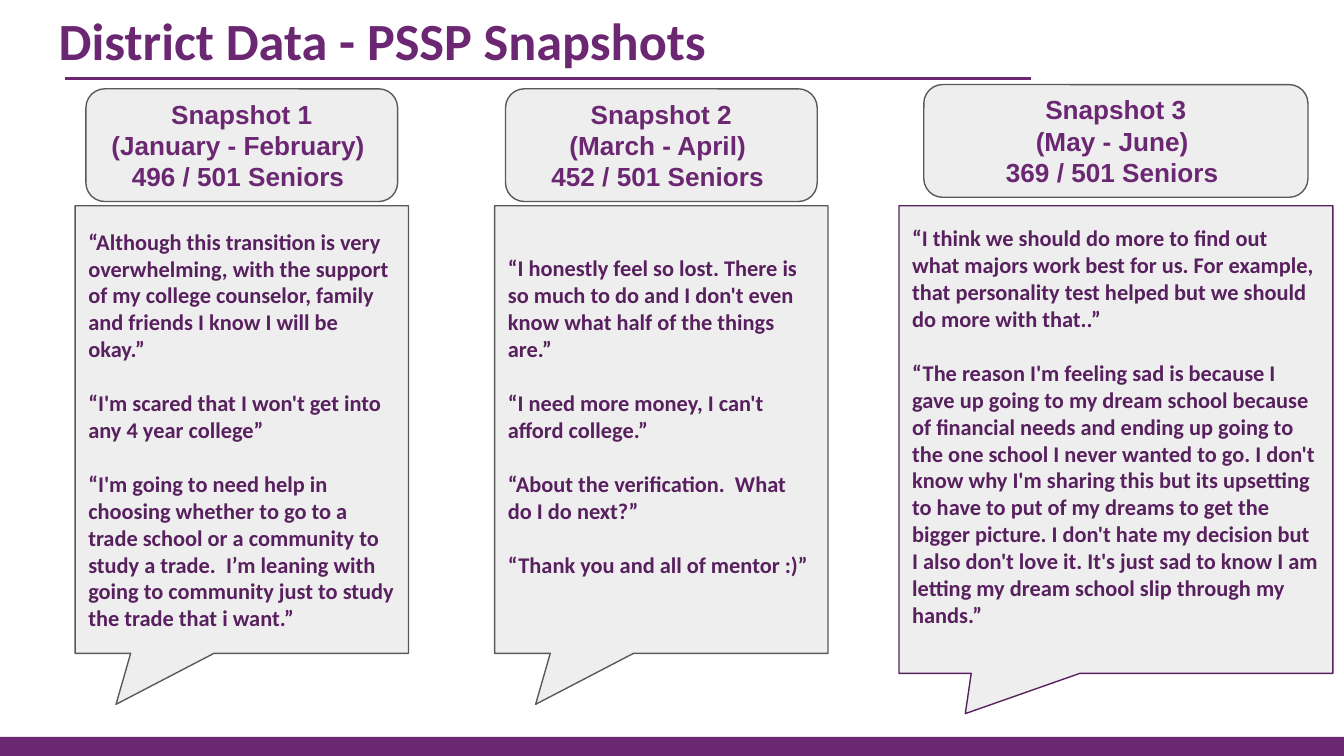
import pptx
import pptx.util
import pptx.dml.color
import pptx.enum.shapes
import pptx.enum.text
import lxml.etree

Cm, Pt = pptx.util.Cm, pptx.util.Pt
KIND = pptx.enum.shapes.MSO_SHAPE
ALIGN = pptx.enum.text.PP_ALIGN
ANCHOR = pptx.enum.text.MSO_ANCHOR

HUES = {"plum": "6B2772", "dark": "58205E", "pale": "EEEEEE", "gray": "595959"}
TITLE = "District Data - PSSP Snapshots"
PAD = 0.25
GAP = 14.5  # points, one line of a quote

# mid and all sizes in cm; tail is the tip of the bubble; lift raises the text
COLS = [
    {"head": ["Snapshot 1", "(January - February) ", "496 / 501 Seniors "],
     "quotes": [
         "“Although this transition is very overwhelming, with the support of my "
         "college counselor, family and friends I know I will be okay.”",
         "“I'm scared that I won't get into any 4 year college”",
         "“I'm going to need help in choosing whether to go to a trade school or a "
         "community to study a trade.  I’m leaning with going to community just to "
         "study the trade that i want.”"],
     "mid": 4.57, "top": 1.68, "wide": 5.89, "box": (6.3, 8.46),
     "tail": (-0.377, 0.614, 0), "line": "gray", "lift": 0},
    {"head": ["Snapshot 2", "(March - April) ", "452 / 501 Seniors "],
     "quotes": [
         "“I honestly feel so lost. There is so much to do and I don't even know "
         "what half of the things are.”",
         "“I need more money, I can't afford college.”",
         "“About the verification.  What do I do next?”",
         "“Thank you and all of mentor :)”"],
     "mid": 12.5, "top": 1.68, "wide": 5.89, "box": (6.3, 8.46),
     "tail": (-0.377, 0.614, 0), "line": "gray", "lift": 0.51},
    {"head": ["Snapshot 3", "(May - June) ", "369 / 501 Seniors "],
     "quotes": [
         "“I think we should do more to find out what majors work best for us. For "
         "example, that personality test helped but we should do more with that..”",
         "“The reason I'm feeling sad is because I gave up going to my dream school "
         "because of financial needs and ending up going to the one school I never "
         "wanted to go. I don't know why I'm sharing this but its upsetting to have "
         "to put of my dreams to get the bigger picture. I don't hate my decision "
         "but I also don't love it. It's just sad to know I am letting my dream "
         "school slip through my hands.”"],
     "mid": 21.09, "top": 1.6, "wide": 7.26, "box": (8.2, 8.84),
     "tail": (-0.347, 0.586, 0), "line": "dark", "lift": 0.51},
]


def tint(name):
    return pptx.dml.color.RGBColor.from_string(HUES[name])


def write(frame, lines, face, size, hue, align, gap=0):
    for i, text in enumerate(lines):
        para = frame.paragraphs[0] if i == 0 else frame.add_paragraph()
        para.alignment = align
        if i and gap:
            para.space_before = Pt(gap)
        run = para.add_run()
        run.text = text
        run.font.name = face
        run.font.size = Pt(size)
        run.font.bold = True
        run.font.color.rgb = tint(hue)


def set_frame(frame, anchor, lift=0):
    frame.word_wrap = True
    frame.auto_size = pptx.enum.text.MSO_AUTO_SIZE.NONE
    frame.vertical_anchor = anchor
    frame.margin_left = frame.margin_right = frame.margin_top = Cm(PAD)
    frame.margin_bottom = Cm(PAD + lift)


def add_box(slide, kind, place, fill, line=None, adj=()):
    shape = slide.shapes.add_shape(kind, *map(Cm, place))
    shape.shadow.inherit = False
    shape.fill.solid()
    shape.fill.fore_color.rgb = tint(fill)
    if line:
        shape.line.color.rgb = tint(line)
        shape.line.width = Pt(0.75)
    else:
        shape.line.fill.background()
    for i, part in enumerate(adj):
        shape.adjustments[i] = part
    return shape


def add_rule(slide, left, right, y):
    rule = slide.shapes.add_connector(
        pptx.enum.shapes.MSO_CONNECTOR.STRAIGHT, Cm(left), Cm(y), Cm(right), Cm(y))
    rule.line.color.rgb = tint("plum")
    rule.line.width = Pt(1.5)
    props = rule._element.spPr
    lxml.etree.SubElement(props, pptx.oxml.ns.qn("a:effectLst"))


def add_col(slide, col):
    wide, high = col["wide"], 2.13
    head = add_box(slide, KIND.ROUNDED_RECTANGLE,
                   (col["mid"] - wide / 2, col["top"], wide, high),
                   "pale", "gray", (0.167,))
    set_frame(head.text_frame, ANCHOR.MIDDLE)
    write(head.text_frame, col["head"], "Arial", 14, "plum", ALIGN.CENTER)

    wide, high = col["box"]
    note = add_box(slide, KIND.ROUNDED_RECTANGULAR_CALLOUT,
                   (col["mid"] - wide / 2, 3.89, wide, high),
                   "pale", col["line"], col["tail"])
    set_frame(note.text_frame, ANCHOR.MIDDLE, col["lift"])
    write(note.text_frame, col["quotes"], "Calibri", 12, "dark", ALIGN.LEFT, GAP)


def main():
    deck = pptx.Presentation()
    deck.slide_width, deck.slide_height = Cm(25.4), Cm(14.29)
    slide = deck.slides.add_slide(deck.slide_layouts[5])

    title = slide.shapes.title
    title.left, title.top, title.width, title.height = map(Cm, (0.86, 0.36, 23.67, 1.24))
    set_frame(title.text_frame, ANCHOR.BOTTOM)
    write(title.text_frame, [TITLE], "Calibri", 28, "plum", ALIGN.LEFT)

    add_box(slide, KIND.RECTANGLE, (0, 13.93, 25.4, 0.36), "plum")
    add_rule(slide, 1.22, 19.48, 1.49)
    for col in COLS:
        add_col(slide, col)
    deck.save("out.pptx")


if __name__ == "__main__":
    main()
